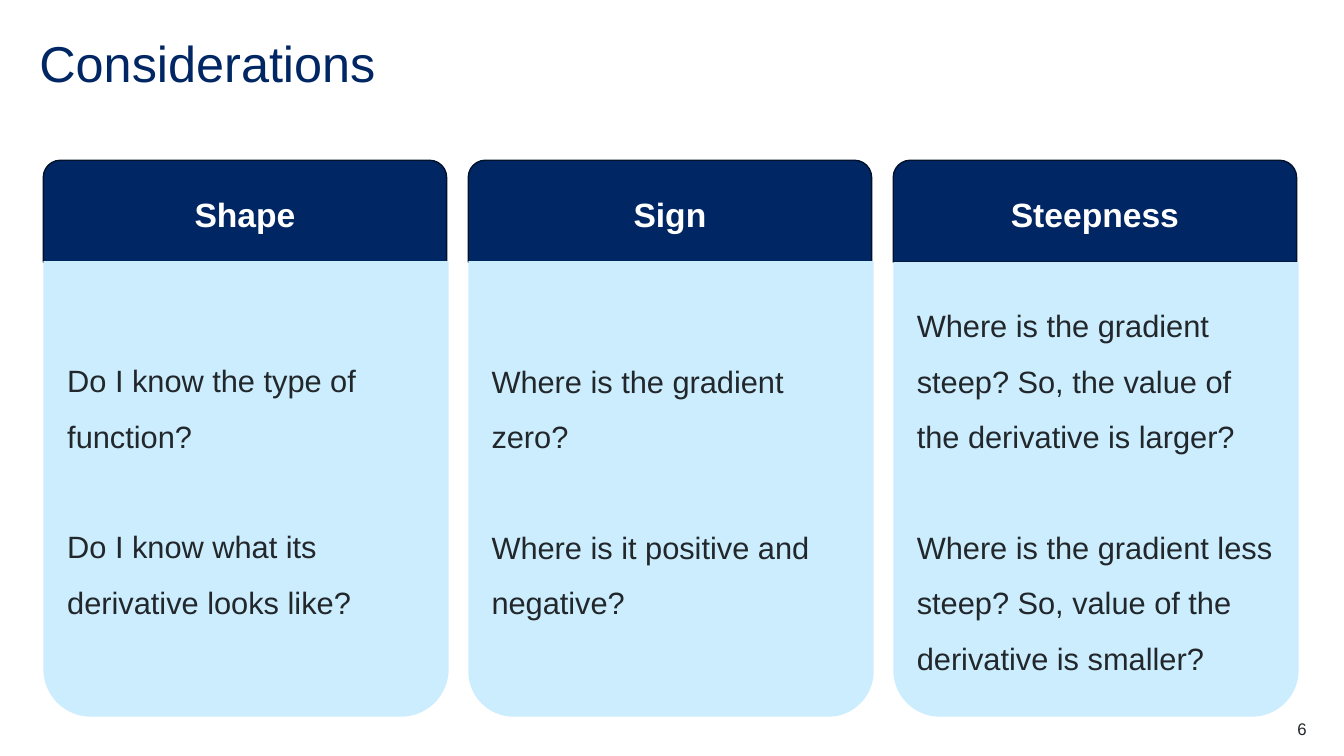
"""Build the slide on three considerations for sketching a derivative."""
import pptx
import pptx.util
import pptx.dml.color
import pptx.enum.shapes
import pptx.enum.text

Inches = pptx.util.Inches
Pt = pptx.util.Pt
ALIGN = pptx.enum.text.PP_ALIGN
ROUND = pptx.enum.shapes.MSO_SHAPE.ROUND_2_SAME_RECTANGLE
NAVY, EDGE, PALE, INK, WHITE = "002664", "00112C", "CBEDFD", "22272B", "FFFFFF"


def color(code):
    """Turn a hex string into a colour."""
    return pptx.dml.color.RGBColor.from_string(code)


def write(frame, lines, size, ink, align=ALIGN.LEFT, bold=False, space=1.0, gap=0):
    """Fill a text frame with one run per paragraph."""
    frame.word_wrap = True
    for i, line in enumerate(lines):
        para = frame.paragraphs[0] if i == 0 else frame.add_paragraph()
        para.alignment = align
        para.line_spacing = space
        if i:
            para.space_before = Pt(gap)
        run = para.add_run()
        run.text = line
        run.font.name = "Arial"
        run.font.size = Pt(size)
        run.font.bold = bold
        run.font.color.rgb = color(ink)


deck = pptx.Presentation()
deck.slide_width = Inches(13.33)
deck.slide_height = Inches(7.5)
slide = deck.slides.add_slide(deck.slide_layouts[6])

labels = [
    ("Considerations", 0.39, 0.39, 12.56, 0.6, 36, NAVY, ALIGN.LEFT, 0.9),
    ("6", 12.17, 7.13, 0.79, 0.2, 12, INK, ALIGN.RIGHT, 1.0),
]
for text, left, top, width, height, size, ink, align, space in labels:
    box = slide.shapes.add_textbox(Inches(left), Inches(top), Inches(width), Inches(height))
    frame = box.text_frame
    frame.margin_left = frame.margin_right = frame.margin_top = frame.margin_bottom = 0
    write(frame, [text], size, ink, align, space=space)

cards = [
    ("Shape", 2.59, 0.118, [
        "Do I know the type of function?",
        "Do I know what its derivative looks like?"]),
    ("Sign", 2.59, 0.112, [
        "Where is the gradient zero?",
        "Where is it positive and negative?"]),
    ("Steepness", 2.6, 0.115, [
        "Where is the gradient steep? So, the value of the derivative is larger?",
        "Where is the gradient less steep? So, value of the derivative is smaller?"]),
]
for i, (name, top, curve, asks) in enumerate(cards):
    left = Inches(0.43 + 4.215 * i)
    head = slide.shapes.add_shape(ROUND, left, Inches(1.59), Inches(4), Inches(1.01))
    head.line.color.rgb = color(EDGE)
    head.line.width = Pt(1)
    body = slide.shapes.add_shape(ROUND, left, Inches(top), Inches(4.02), Inches(7.11 - top))
    body.adjustments[0] = 0
    body.adjustments[1] = curve
    body.line.fill.background()
    for part, fill in ((head, NAVY), (body, PALE)):
        part.shadow.inherit = False
        part.fill.solid()
        part.fill.fore_color.rgb = color(fill)
        part.text_frame.vertical_anchor = pptx.enum.text.MSO_ANCHOR.MIDDLE
    write(head.text_frame, [name], 24, WHITE, ALIGN.CENTER, bold=True)
    write(body.text_frame, asks, 22, INK, space=1.5, gap=39.6)

deck.save("out.pptx")
